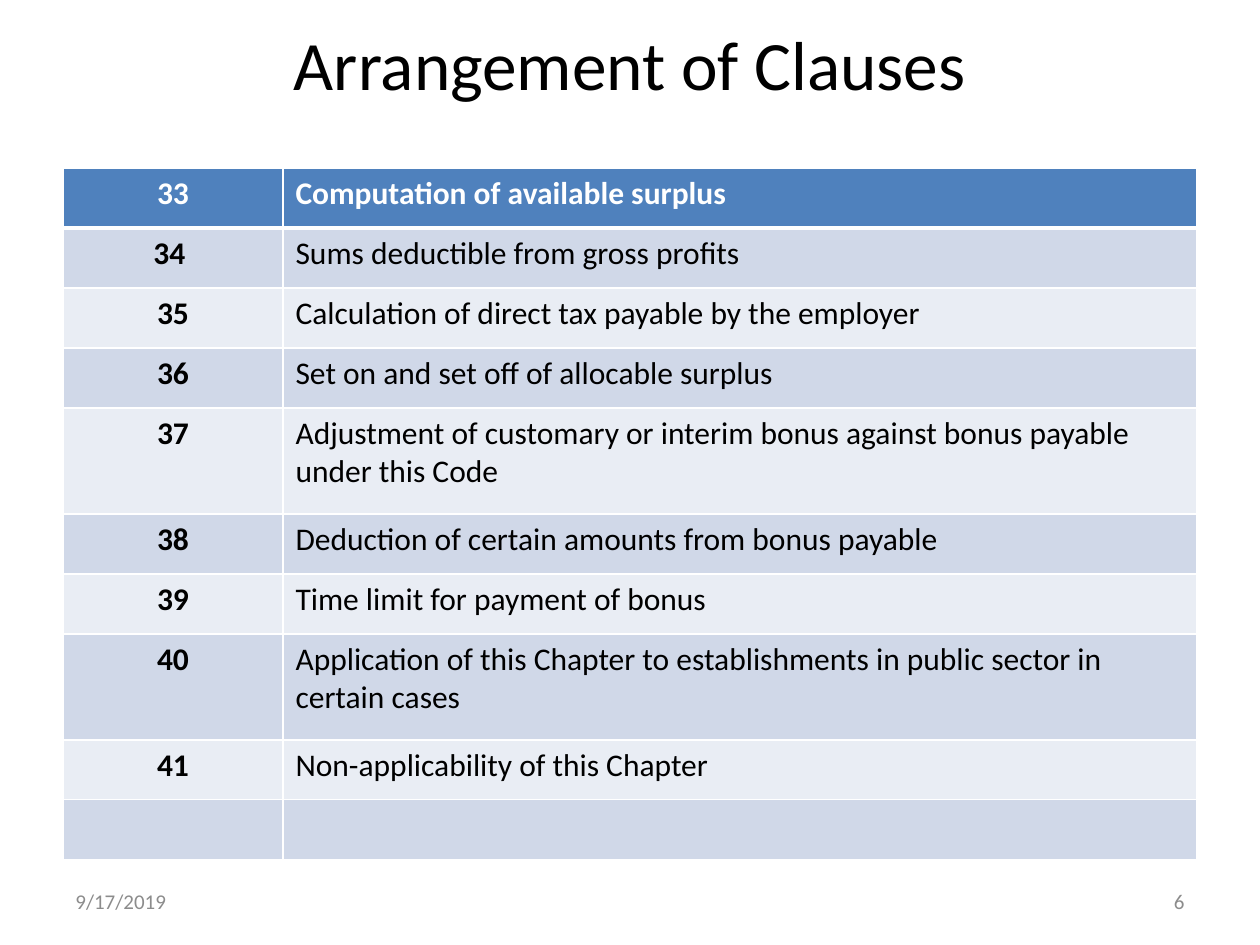
import pptx
import pptx.dml.color
import pptx.enum.text
import pptx.oxml.ns
import pptx.util
from lxml import etree

EMU_PER_PX = 914400 / 126
COLORS = {
    "text": "000000",
    "header": "4F81BD",
    "odd": "D0D8E8",
    "even": "E9EDF4",
    "white": "FFFFFF",
    "footer": "8C8C8C",
}
ALIGN = pptx.enum.text.PP_ALIGN
MIDDLE = pptx.enum.text.MSO_ANCHOR.MIDDLE
CLAUSES = [
    ("33", "Computation of available surplus"),
    ("34 ", "Sums deductible from gross profits"),
    ("35", "Calculation of direct tax payable by the employer"),
    ("36", "Set on and set off of allocable surplus"),
    ("37", "Adjustment of customary or interim bonus against bonus payable under this Code"),
    ("38", "Deduction of certain amounts from bonus payable"),
    ("39", "Time limit for payment of bonus"),
    ("40", "Application of this Chapter to establishments in public sector in certain cases"),
    ("41", "Non-applicability of this Chapter"),
    ("", ""),
]
TWO_LINE_CLAUSES = {"37", "40"}


def px(length):
    return pptx.util.Emu(round(length * EMU_PER_PX))


def rgb(name):
    return pptx.dml.color.RGBColor.from_string(COLORS[name])


def write(frame, text, size=18, color="text", bold=False, align=ALIGN.LEFT):
    paragraph = frame.paragraphs[0]
    paragraph.alignment = align
    paragraph.font.size = pptx.util.Pt(size)
    if text:
        run = paragraph.add_run()
        run.text = text
        run.font.name = "Calibri"
        run.font.size = pptx.util.Pt(size)
        run.font.bold = bold
        run.font.color.rgb = rgb(color)


class ClauseSlide:
    def __init__(self, deck):
        self.slide = deck.slides.add_slide(deck.slide_layouts[5])

    def title(self, text, left, top, width, height):
        heading = self.slide.shapes.title
        heading.left, heading.top = px(left), px(top)
        heading.width, heading.height = px(width), px(height)
        frame = heading.text_frame
        frame.auto_size = pptx.enum.text.MSO_AUTO_SIZE.NONE
        frame.vertical_anchor = MIDDLE
        write(frame, text, size=39.6, align=ALIGN.CENTER)

    def footer(self, text, left, top, width, height, align):
        box = self.slide.shapes.add_textbox(px(left), px(top), px(width), px(height))
        box.text_frame.word_wrap = True
        box.text_frame.vertical_anchor = MIDDLE
        write(box.text_frame, text, size=12, color="footer", align=align)

    def border(self, cell, side, points):
        properties = cell._tc.get_or_add_tcPr()
        line = etree.SubElement(properties, pptx.oxml.ns.qn(f"a:ln{side}"),
                                w=str(pptx.util.Pt(points)))
        fill = etree.SubElement(line, pptx.oxml.ns.qn("a:solidFill"))
        etree.SubElement(fill, pptx.oxml.ns.qn("a:srgbClr"), val=COLORS["white"])

    def cell(self, cell, text, row, column):
        header = row == 0
        for side in "LRTB":
            under_header = (row, side) in ((0, "B"), (1, "T"))
            self.border(cell, side, 3 if under_header else 1)
        cell.fill.solid()
        cell.fill.fore_color.rgb = rgb("header" if header else "odd" if row % 2 else "even")
        write(cell.text_frame, text, color="white" if header else "text",
              bold=header or column == 0,
              align=ALIGN.LEFT if column else ALIGN.CENTER)

    def table(self, rows, left, top, widths, row_height, tall_height):
        heights = [tall_height if number in TWO_LINE_CLAUSES else row_height
                   for number, _ in rows]
        table = self.slide.shapes.add_table(len(rows), len(widths), px(left), px(top),
                                            px(sum(widths)), px(sum(heights))).table
        for column, width in zip(table.columns, widths):
            column.width = px(width)
        for r, (clause, height) in enumerate(zip(rows, heights)):
            table.rows[r].height = px(height)
            for c, text in enumerate(clause):
                self.cell(table.cell(r, c), text, r, c)


def main():
    deck = pptx.Presentation()
    deck.slide_width, deck.slide_height = px(1260), px(945)
    page = ClauseSlide(deck)
    page.title("Arrangement of Clauses", 63, 21, 1134, 84)
    page.table(CLAUSES, 63, 168, (220, 914), 60, 106)
    page.footer("9/17/2019", 63, 876, 294, 50, ALIGN.LEFT)
    page.footer("6", 903, 876, 294, 50, ALIGN.RIGHT)
    deck.save("out.pptx")


if __name__ == "__main__":
    main()
